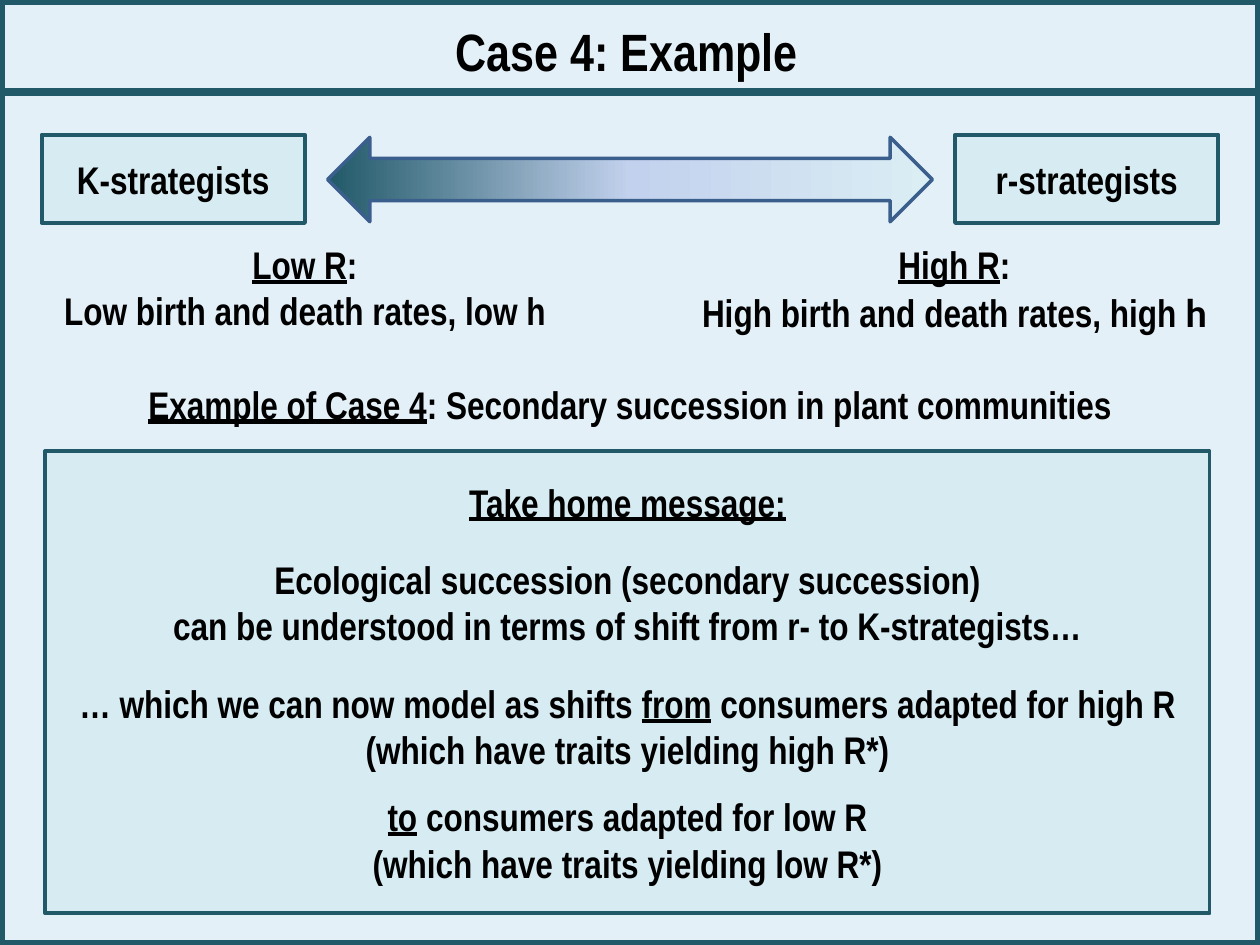
import copy

import pptx
import pptx.dml.color
import pptx.enum.shapes
import pptx.enum.text
import pptx.oxml.ns
import pptx.util

Inches, Pt = pptx.util.Inches, pptx.util.Pt
SHAPE = pptx.enum.shapes.MSO_SHAPE
TEAL, PALE = "215968", "D6EBF2"


def rgb(code):
    """Turn a hex string into a colour."""
    return pptx.dml.color.RGBColor.from_string(code)


def write(frame, lines, size=22, gaps=None):
    """Write centred bold lines, underlining what stands between underscores."""
    frame.word_wrap = True
    frame.vertical_anchor = pptx.enum.text.MSO_ANCHOR.MIDDLE
    frame.margin_left = frame.margin_right = 0
    for i, line in enumerate(lines):
        para = frame.paragraphs[0] if i == 0 else frame.add_paragraph()
        para.alignment = pptx.enum.text.PP_ALIGN.CENTER
        para.space_before = Pt((gaps or {}).get(i, 0))
        for j, part in enumerate(line.split("_")):
            if part:
                run = para.add_run()
                run.text = part
                font = run.font
                font.name, font.size, font.bold = "Arial Narrow", Pt(size), True
                font.underline = j % 2 == 1
                font.color.rgb = rgb("000000")


def place(box):
    """Convert a box in inches to lengths."""
    return [Inches(n) for n in box]


def draw(slide, kind, box, fill=None, line=TEAL, width=2.25):
    """Draw an outlined preset shape."""
    shape = slide.shapes.add_shape(kind, *place(box))
    shape.shadow.inherit = False
    if fill:
        shape.fill.solid()
        shape.fill.fore_color.rgb = rgb(fill)
    else:
        shape.fill.background()
    shape.line.color.rgb = rgb(line)
    shape.line.width = Pt(width)
    return shape


def panel(slide, box, lines, **form):
    """Draw a pale box with text inside."""
    write(draw(slide, SHAPE.RECTANGLE, box, PALE).text_frame, lines, **form)


def label(slide, box, lines):
    """Add a free text box and return its frame."""
    frame = slide.shapes.add_textbox(*place(box)).text_frame
    write(frame, lines)
    return frame


def rule(slide, start, end):
    """Draw the line beneath the title."""
    kind = pptx.enum.shapes.MSO_CONNECTOR.STRAIGHT
    line = slide.shapes.add_connector(kind, *place(start + end))
    line.line.color.rgb = rgb(TEAL)
    line.line.width = Pt(5)
    props = line._element.spPr
    props.append(props.makeelement(pptx.oxml.ns.qn("a:effectLst"), {}))


def blend(shape, *codes):
    """Fill a shape from left to right with evenly spaced colours."""
    shape.fill.gradient()
    shape.fill.gradient_angle = 0
    stops = next(shape._element.iter(pptx.oxml.ns.qn("a:gsLst")))
    for _ in codes[2:]:
        stops.append(copy.deepcopy(stops[-1]))
    for i, (stop, code) in enumerate(zip(shape.fill.gradient_stops, codes)):
        stop.position = i / (len(codes) - 1)
        stop.color.rgb = rgb(code)


def main():
    """Build the slide and save it."""
    deck = pptx.Presentation()
    deck.slide_width, deck.slide_height = Inches(10), Inches(7.5)
    slide = deck.slides.add_slide(deck.slide_layouts[5])
    slide.background.fill.solid()
    slide.background.fill.fore_color.rgb = rgb("E4F0F8")
    draw(slide, SHAPE.RECTANGLE, (0, 0, 10, 7.5), width=6)
    rule(slide, (0, 0.73), (10, 0.73))

    title = slide.shapes.title
    title.left, title.top, title.width, title.height = place((0.74, 0.1, 8.47, 0.61))
    write(title.text_frame, ["Case 4: Example"], size=30)

    for left, name in ((0.33, "K-strategists"), (7.58, "r-strategists")):
        panel(slide, (left, 1.07, 2.09, 0.7), [name])
    arrow = draw(slide, SHAPE.LEFT_RIGHT_ARROW, (2.6, 1.09, 4.8, 0.67),
                 line="3A5F8C", width=2)
    blend(arrow, TEAL, "C2D1ED", "DBEEF4")

    label(slide, (0.38, 1.86, 4.08, 0.84),
          ["_Low R_:", "Low birth and death rates, low h"])
    high = label(slide, (5.47, 1.86, 4.21, 0.86),
                 ["_High R_:", "High birth and death rates, high __h"])
    last = high.paragraphs[1].runs[-1].font
    last.name, last.size = "Calibri", Pt(23)
    label(slide, (0.4, 2.97, 9.2, 0.47),
          ["_Example of Case 4_: Secondary succession in plant communities"])

    panel(slide, (0.36, 3.58, 9.24, 3.67), [
        "_Take home message:_",
        "Ecological succession (secondary succession)",
        "can be understood in terms of shift from r- to K-strategists…",
        "… which we can now model as shifts _from_ consumers adapted for high R",
        "(which have traits yielding high R*)",
        "_to_ consumers adapted for low R",
        "(which have traits yielding low R*)",
    ], gaps={1: 18, 3: 18, 5: 12})
    deck.save("out.pptx")


if __name__ == "__main__":
    main()
